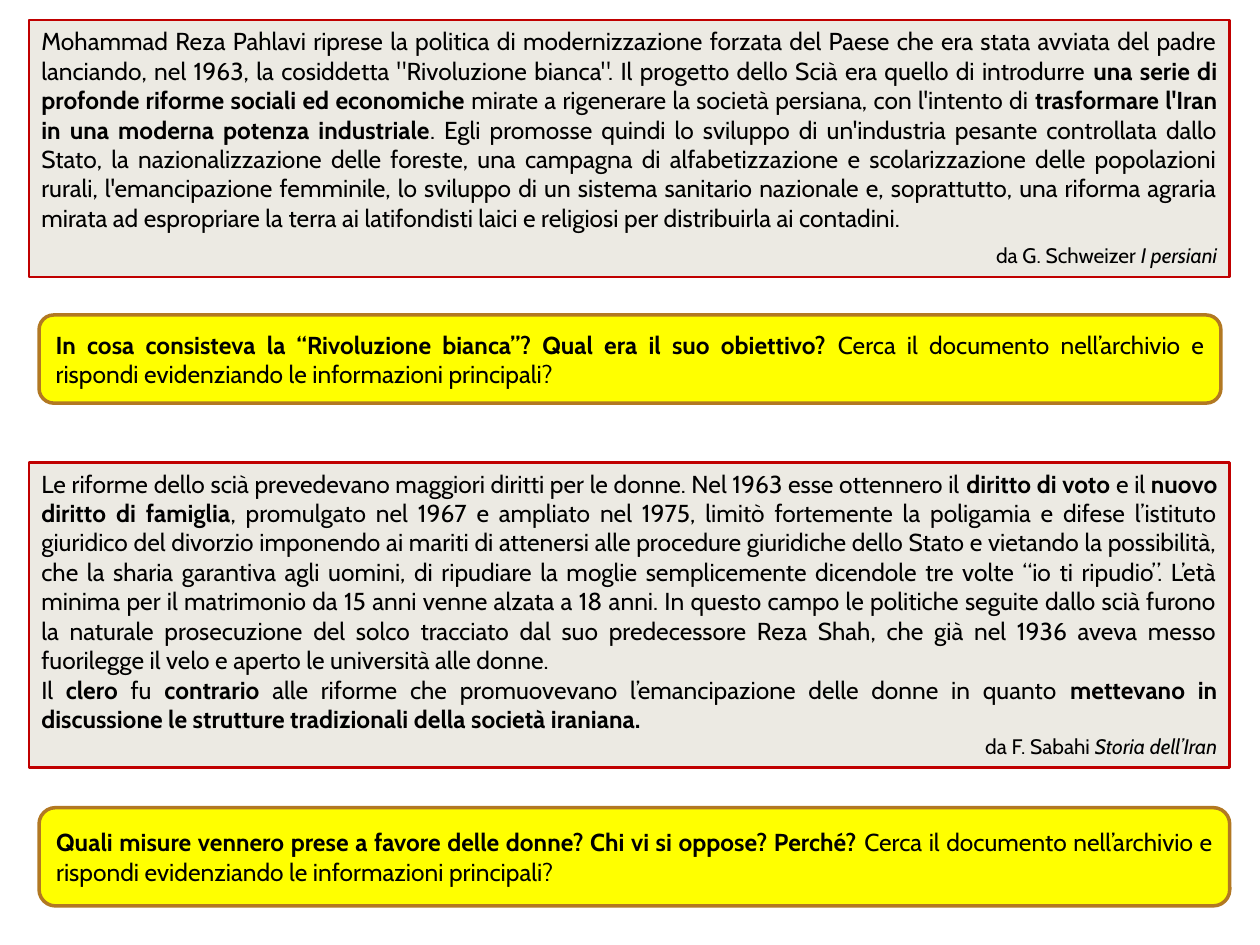
from pptx import Presentation
from pptx.dml.color import RGBColor
from pptx.enum import shapes, text
from pptx.util import Inches, Pt

BLACK = RGBColor(0x00, 0x00, 0x00)
GREY = RGBColor(0xEC, 0xEA, 0xE3)
RED = RGBColor(0xC0, 0x00, 0x00)
YELLOW = RGBColor(0xFF, 0xFF, 0x00)
BROWN = RGBColor(0xB2, 0x78, 0x22)


def add_run(p, txt, size=14, bold=False, italic=False):
    r = p.add_run()
    r.text = txt
    r.font.name = "Cabin"
    r.font.size = Pt(size)
    r.font.bold = bold
    r.font.italic = italic
    r.font.color.rgb = BLACK


def add_box(s, kind, box, fill, line, width):
    sp = s.shapes.add_shape(kind, *[Inches(v) for v in box])
    sp.shadow.inherit = False
    sp.fill.solid()
    sp.fill.fore_color.rgb = fill
    sp.line.color.rgb = line
    sp.line.width = Pt(width)
    sp.text_frame.word_wrap = True
    return sp.text_frame


prs = Presentation()
prs.slide_width = Inches(10)
prs.slide_height = Inches(7.5)
s = prs.slides.add_slide(prs.slide_layouts[6])

documents = [
    (0.16, 2.04, 6, [
        [("Mohammad Reza Pahlavi riprese la politica di modernizzazione forzata del Paese che era stata "
          "avviata del padre lanciando, nel 1963, la cosiddetta \"Rivoluzione bianca\". Il progetto dello "
          "Scià era quello di introdurre ", False),
         ("una serie di profonde riforme sociali ed economiche", True),
         (" mirate a rigenerare la società persiana, con l'intento di ", False),
         ("trasformare l'Iran in una moderna potenza industriale", True),
         (". Egli promosse quindi lo sviluppo di un'industria pesante controllata dallo Stato, la "
          "nazionalizzazione delle foreste, una campagna di alfabetizzazione e scolarizzazione delle "
          "popolazioni rurali, l'emancipazione femminile, lo sviluppo di un sistema sanitario nazionale e, "
          "soprattutto, una riforma agraria mirata ad espropriare la terra ai latifondisti laici e "
          "religiosi per distribuirla ai contadini.", False)],
    ], "da G. Schweizer ", "I persiani"),
    (3.67, 2.42, 0, [
        [("Le riforme dello scià prevedevano maggiori diritti per le donne. Nel 1963 esse ottennero il ", False),
         ("diritto di voto ", True),
         ("e il ", False),
         ("nuovo diritto di famiglia", True),
         (", promulgato nel 1967 e ampliato nel 1975, limitò fortemente la poligamia e difese l’istituto "
          "giuridico del divorzio imponendo ai mariti di attenersi alle procedure giuridiche dello Stato e "
          "vietando la possibilità, che la sharia garantiva agli uomini, di ripudiare la moglie "
          "semplicemente dicendole tre volte “io ti ripudio”. L’età minima per il matrimonio da 15 anni "
          "venne alzata a 18 anni. In questo campo le politiche seguite dallo scià furono la naturale "
          "prosecuzione del solco tracciato dal suo predecessore Reza Shah, che già nel 1936 aveva messo "
          "fuorilegge il velo e aperto le università alle donne.", False)],
        [("Il ", False),
         ("clero", True),
         (" fu ", False),
         ("contrario", True),
         (" alle riforme che promuovevano l’emancipazione delle donne in quanto ", False),
         ("mettevano in discussione le strutture tradizionali della società iraniana.", True)],
    ], "da F. Sabahi ", "Storia dell’Iran"),
]

for top, height, gap, paragraphs, author, title in documents:
    tf = add_box(s, shapes.MSO_SHAPE.RECTANGLE, (0.23, top, 9.53, height), GREY, RED, 1.5)
    tf.vertical_anchor = text.MSO_ANCHOR.TOP
    tf.auto_size = text.MSO_AUTO_SIZE.SHAPE_TO_FIT_TEXT
    p = tf.paragraphs[0]
    for runs in paragraphs:
        p.alignment = text.PP_ALIGN.JUSTIFY
        p.space_after = Pt(gap)
        for txt, bold in runs:
            add_run(p, txt, bold=bold)
        p = tf.add_paragraph()
    p.alignment = text.PP_ALIGN.RIGHT
    p.space_after = Pt(gap)
    add_run(p, author, size=12)
    add_run(p, title, size=12, italic=True)

questions = [
    (2.5, 9.38, 0.7, "In cosa consisteva la “Rivoluzione bianca”? Qual era il suo obiettivo? "),
    (6.41, 9.45, 0.78, "Quali misure vennero prese a favore delle donne? Chi vi si oppose? Perché? "),
]

for top, width, height, question in questions:
    tf = add_box(s, shapes.MSO_SHAPE.ROUNDED_RECTANGLE, (0.31, top, width, height), YELLOW, BROWN, 2)
    tf.vertical_anchor = text.MSO_ANCHOR.MIDDLE
    p = tf.paragraphs[0]
    p.alignment = text.PP_ALIGN.JUSTIFY
    add_run(p, question, bold=True)
    add_run(p, "Cerca il documento nell’archivio e rispondi evidenziando le informazioni principali?")

prs.save("out.pptx")
